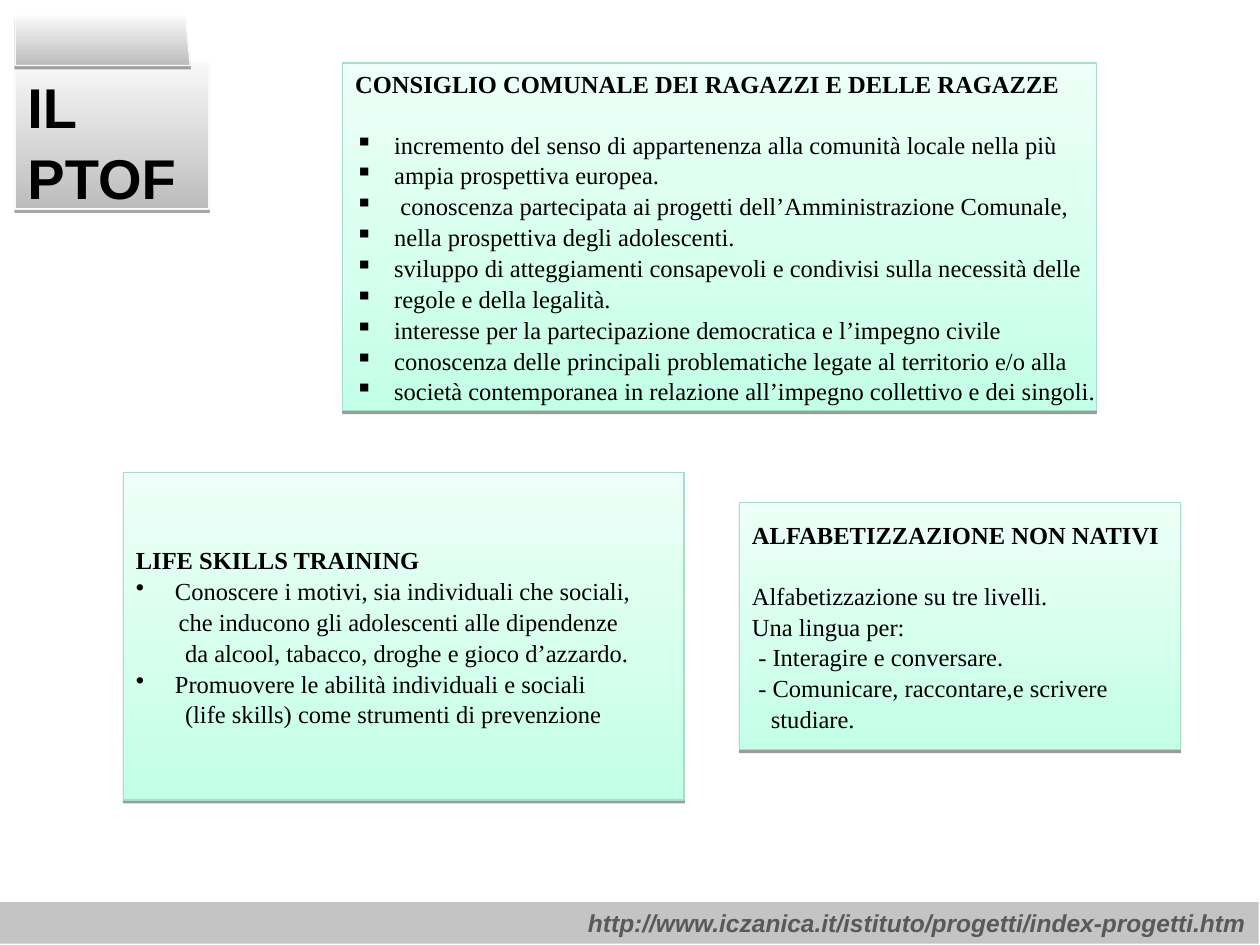
from lxml.etree import SubElement
from pptx import Presentation
from pptx.dml.color import RGBColor
from pptx.enum.shapes import MSO_SHAPE
from pptx.enum.text import MSO_ANCHOR, PP_ALIGN
from pptx.oxml.ns import qn
from pptx.util import Inches, Pt


def colour(value):
    return RGBColor.from_string(value)


class ProjectSlide:
    """Styles and draws the elements of the school projects slide."""

    mint = {"stops": ("EDFFF8", "C3FFE8"), "line": "A5DEC6", "alpha": 38, "drop": 1.6}
    silver = {"stops": ("F8F8F8", "BDBDBD"), "line": "F9F9F9", "alpha": 35, "drop": 1.8}
    body = {"name": "Times New Roman", "size": Pt(14), "bold": False}
    heading = {**body, "bold": True}
    title = {"name": "Arial", "size": Pt(32), "bold": True}
    link = {"name": "Arial", "size": Pt(14), "bold": True, "italic": True}

    def __init__(self, page):
        self.page = page

    def rectangle(self, left, top, width, height):
        box = self.page.shapes.add_shape(
            MSO_SHAPE.RECTANGLE, Inches(left), Inches(top), Inches(width), Inches(height)
        )
        box.shadow.inherit = False
        return box

    def polygon(self, points):
        corners = [(Inches(x), Inches(y)) for x, y in points]
        builder = self.page.shapes.build_freeform(*corners[0])
        builder.add_line_segments(corners[1:], close=True)
        shape = builder.convert_to_shape()
        shape.shadow.inherit = False
        return shape

    def decorate(self, shape, look):
        shape.fill.gradient()
        shape.fill.gradient_angle = 270
        for stop, position, value in zip(shape.fill.gradient_stops, (0, 1), look["stops"]):
            stop.position = position
            stop.color.rgb = colour(value)
        shape.line.color.rgb = colour(look["line"])
        shape.line.width = Pt(0.75)
        effects = shape._element.spPr.find(qn("a:effectLst"))
        shadow = SubElement(
            effects, qn("a:outerShdw"), blurRad="0", dist=str(Pt(look["drop"])),
            dir="5400000", algn="ctr", rotWithShape="0",
        )
        black = SubElement(shadow, qn("a:srgbClr"), val="000000")
        SubElement(black, qn("a:alpha"), val=str(look["alpha"] * 1000))

    def add_text(self, para, text, style, shade="000000", **layout):
        span = para.add_run()
        span.text = text
        for key, value in style.items():
            setattr(span.font, key, value)
        span.font.color.rgb = colour(shade)
        for key, value in {"alignment": PP_ALIGN.LEFT, "line_spacing": 1.05, **layout}.items():
            setattr(para, key, value)

    def indent(self, para, margin, bullet):
        properties = para._p.get_or_add_pPr()
        properties.set("marL", str(Inches(margin)))
        properties.set("indent", str(-Inches(margin) if bullet else 0))
        if bullet:
            SubElement(properties, qn("a:buChar"), char=bullet)
        else:
            SubElement(properties, qn("a:buNone"))

    def card(self, place, heading, gap, lines):
        box = self.rectangle(*place)
        self.decorate(box, self.mint)
        frame = box.text_frame
        frame.word_wrap = False
        frame.vertical_anchor = MSO_ANCHOR.MIDDLE
        self.add_text(frame.paragraphs[0], heading, self.heading, space_after=Pt(gap))
        for bullet, margin, text in lines:
            para = frame.add_paragraph()
            self.indent(para, margin, bullet)
            self.add_text(para, text, self.body)

    def label(self, box, text, style, anchor, **options):
        frame = box.text_frame
        frame.word_wrap = True
        frame.vertical_anchor = anchor
        self.add_text(frame.paragraphs[0], text, style, **options)

    def folder(self, text):
        front = self.rectangle(0.12, 0.5, 1.54, 1.16)
        self.decorate(front, self.silver)
        self.label(front, text, self.title, MSO_ANCHOR.TOP)
        tab = self.polygon([(0.12, 0.13), (1.47, 0.13), (1.51, 0.52), (0.12, 0.52)])
        self.decorate(tab, self.silver)

    def footer(self, text):
        bar = self.rectangle(0, 7.16, 9.99, 0.33)
        bar.fill.solid()
        bar.fill.fore_color.rgb = colour("C4C4C4")
        bar.line.fill.background()
        self.label(bar, text, self.link, MSO_ANCHOR.BOTTOM, shade="595959",
                   alignment=PP_ALIGN.RIGHT)


def main():
    deck = Presentation()
    deck.slide_width, deck.slide_height = Inches(10), Inches(7.5)
    slide = ProjectSlide(deck.slides.add_slide(deck.slide_layouts[6]))
    council = [
        (0.31, "incremento del senso di appartenenza alla comunità locale nella più"),
        (0.31, "ampia prospettiva europea."),
        (0.36, "conoscenza partecipata ai progetti dell’Amministrazione Comunale,"),
        (0.31, "nella prospettiva degli adolescenti."),
        (0.31, "sviluppo di atteggiamenti consapevoli e condivisi sulla necessità delle"),
        (0.31, "regole e della legalità."),
        (0.31, "interesse per la partecipazione democratica e l’impegno civile"),
        (0.31, "conoscenza delle principali problematiche legate al territorio e/o alla"),
        (0.31, "società contemporanea in relazione all’impegno collettivo e dei singoli."),
    ]
    literacy = [
        (None, 0, "Alfabetizzazione su tre livelli."),
        (None, 0, "Una lingua per:"),
        (None, 0.05, "- Interagire e conversare."),
        (None, 0.05, "- Comunicare, raccontare,e scrivere"),
        (None, 0.15, "studiare."),
    ]
    life_skills = [
        ("•", 0.31, "Conoscere i motivi, sia individuali che sociali,"),
        (None, 0.34, "che inducono gli adolescenti alle dipendenze"),
        (None, 0.39, "da alcool, tabacco, droghe e gioco d’azzardo."),
        ("•", 0.31, "Promuovere le abilità individuali e sociali"),
        (None, 0.39, "(life skills) come strumenti di prevenzione"),
    ]
    slide.card((2.72, 0.5, 5.98, 2.76), "CONSIGLIO COMUNALE DEI RAGAZZI E DELLE RAGAZZE",
               16.9, [("▪", margin, text) for margin, text in council])
    slide.card((5.87, 3.99, 3.5, 1.96), "ALFABETIZZAZIONE NON NATIVI", 16.9, literacy)
    slide.card((0.98, 3.75, 4.45, 2.6), "LIFE SKILLS TRAINING", 0, life_skills)
    slide.folder("IL PTOF")
    slide.footer("http://www.iczanica.it/istituto/progetti/index-progetti.htm")
    deck.save("out.pptx")


if __name__ == "__main__":
    main()
